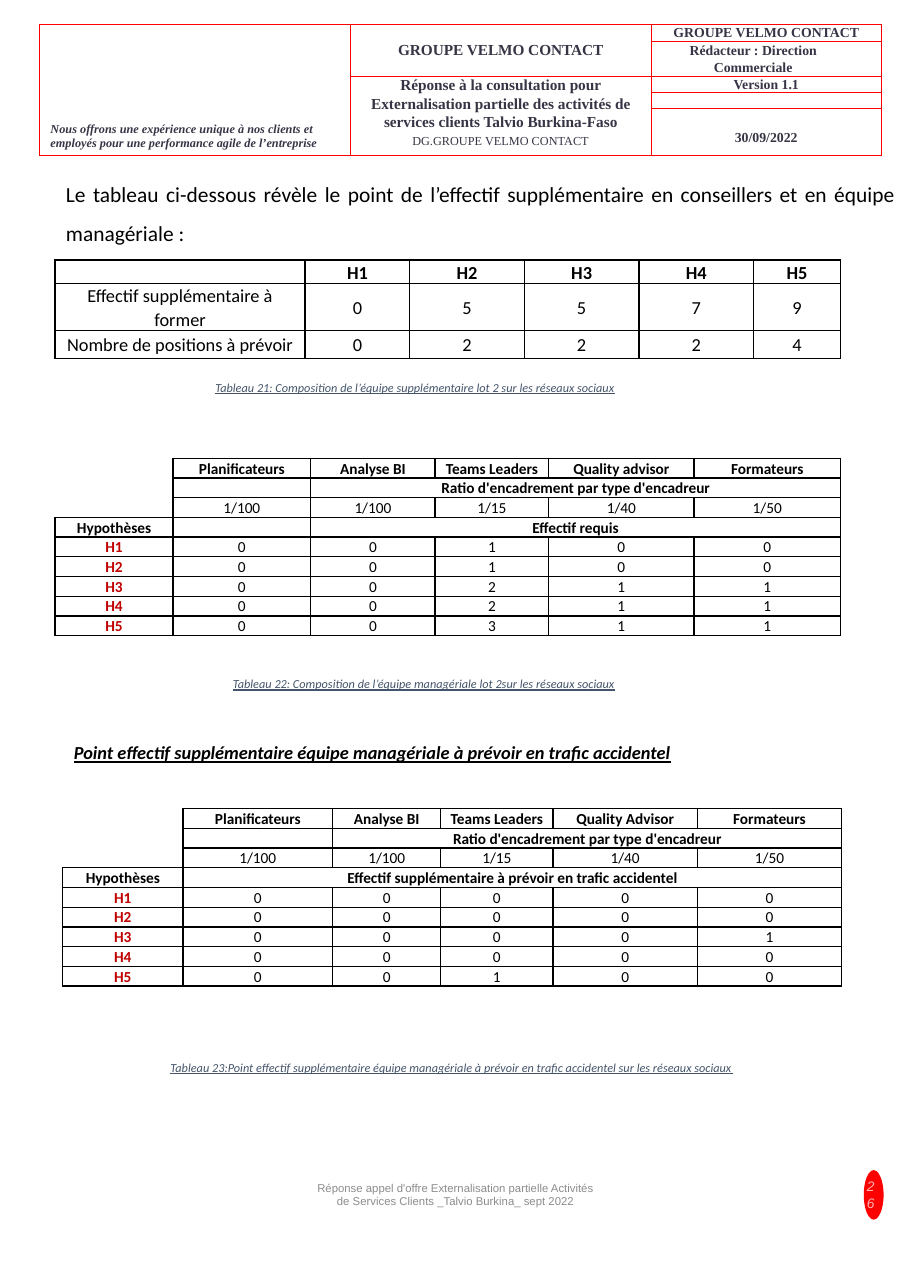
import pptx
import pptx.util
import pptx.dml.color
import pptx.enum.shapes
import pptx.enum.text
import pptx.oxml
from lxml import etree
from pptx.util import Inches, Pt

COLORS = {"text": "000000", "header": "373545", "hypothesis": "C00000", "caption": "44546A",
          "footer": "8C8C8C", "accent": "FF0000", "page_number": "FFB3B3"}
ALIGN = pptx.enum.text.PP_ALIGN
ANCHOR = pptx.enum.text.MSO_ANCHOR
DRAWING = "http://schemas.openxmlformats.org/drawingml/2006/main"
PLAIN_STYLE = "{2D5ABB26-0587-4C30-8999-92F81FD0307C}"


def format_para(para, size, font="Calibri", color="text", bold=False, italic=False,
                underline=False, align=ALIGN.CENTER, spacing=None):
    para.alignment = align
    if spacing:
        para.line_spacing = spacing
    para.font.size = Pt(size)
    para.font.name = font
    para.font.bold = bold
    para.font.italic = italic
    para.font.underline = underline
    para.font.color.rgb = pptx.dml.color.RGBColor.from_string(COLORS[color])


def add_text(page, box, text, size, wrap=True, anchor=ANCHOR.TOP, **style):
    frame = page.shapes.add_textbox(*map(Inches, box)).text_frame
    frame.word_wrap = wrap
    frame.vertical_anchor = anchor
    frame.text = text
    format_para(frame.paragraphs[0], size, **style)
    return frame.paragraphs[0]


def set_borders(cell, sides, color, width):
    props = cell._tc.get_or_add_tcPr()
    for index, side in enumerate(side for side in "LRTB" if side in sides):
        line = pptx.oxml.parse_xml(
            f'<a:ln{side} xmlns:a="{DRAWING}" w="{int(Pt(width))}"><a:solidFill>'
            f'<a:srgbClr val="{COLORS[color]}"/></a:solidFill></a:ln{side}>')
        props.insert(index, line)


def add_grid(page, left, top, columns, rows, color, width, margin, open_cells=()):
    box = map(Inches, (left, top, sum(columns), sum(rows)))
    table = page.shapes.add_table(len(rows), len(columns), *box).table
    table.first_row = table.horz_banding = False
    table._tbl.tblPr.find(f"{{{DRAWING}}}tableStyleId").text = PLAIN_STYLE
    for column, size in zip(table.columns, columns):
        column.width = Inches(size)
    for row, size in zip(table.rows, rows):
        row.height = Inches(size)
    for row in range(len(rows)):
        for column in range(len(columns)):
            cell = table.cell(row, column)
            cell.fill.background()
            cell.vertical_anchor = ANCHOR.MIDDLE
            cell.margin_left = cell.margin_right = Inches(margin)
            cell.margin_top = cell.margin_bottom = 0
            sides = "LRTB"
            if (row, column) in open_cells:
                sides = "R" if (row + 1, column) in open_cells else "RB"
            set_borders(cell, sides, color, width)
    return table


def fill_cell(cell, text, size, **style):
    if text:
        cell.text = text
        format_para(cell.text_frame.paragraphs[0], size, **style)
    else:
        para = cell.text_frame.paragraphs[0]
        etree.SubElement(para._p, f"{{{DRAWING}}}endParaRPr", sz=str(size * 100))


def add_header(page, left, top):
    table = add_grid(page, left, top, [2.82, 2.73, 2.09], [0.15, 0.32, 0.15, 0.14, 0.43],
                     "accent", 0.25, 0)
    for first, last in (((0, 0), (4, 0)), ((0, 1), (1, 1)), ((2, 1), (4, 1))):
        table.cell(*first).merge(table.cell(*last))
    style = dict(font="Times New Roman", color="header")
    entries = {
        (0, 0): ("", 6, None),
        (0, 1): ("GROUPE VELMO CONTACT", 10, None),
        (0, 2): ("GROUPE VELMO CONTACT", 9, Pt(10.7)),
        (1, 2): ("Rédacteur : Direction Commerciale", 9, Pt(11.3)),
        (2, 1): ("Réponse à la consultation pour", 10, Pt(11.9)),
        (2, 2): ("Version 1.1", 9, Pt(10.8)),
        (3, 2): ("", 6, None),
        (4, 2): ("30/09/2022", 9, None),
    }
    for place, (text, size, spacing) in entries.items():
        fill_cell(table.cell(*place), text, size, bold=True, spacing=spacing, **style)

    subject = table.cell(2, 1)
    subject.vertical_anchor = ANCHOR.TOP
    para = subject.text_frame.add_paragraph()
    para.text = "Externalisation partielle des activités de services clients Talvio Burkina-Faso"
    format_para(para, 10, bold=True, spacing=Pt(11.9), **style)
    para = subject.text_frame.add_paragraph()
    para.text = "DG.GROUPE VELMO CONTACT"
    para.space_before = Pt(2.6)
    format_para(para, 8, **style)

    author = table.cell(1, 2)
    author.margin_right = Inches(0.4)
    author_para = author.text_frame.paragraphs[0]
    author_para.alignment = ALIGN.LEFT
    props = author_para._p.get_or_add_pPr()
    props.set("marL", str(Inches(0.57)))
    props.set("indent", str(-Inches(0.22)))
    date = table.cell(4, 2)
    date.vertical_anchor = ANCHOR.TOP
    date.margin_top = Inches(0.2)

    add_text(page, (left, top + 0.83, 2.85, 0.37),
             "Nous offrons une expérience unique à nos clients et employés pour une "
             "performance agile de l’entreprise",
             8, bold=True, italic=True, align=ALIGN.LEFT, **style)


def add_staff_table(page, left, top):
    table = add_grid(page, left, top, [2.27, 0.95, 1.04, 1.04, 1.04, 0.79],
                     [0.21, 0.25, 0.25], "text", 1, 0.07)
    content = [["", "H1", "H2", "H3", "H4", "H5"],
               ["Effectif supplémentaire à former", "0", "5", "5", "7", "9"],
               ["Nombre de positions à prévoir", "0", "2", "2", "2", "4"]]
    for row, texts in enumerate(content):
        for column, text in enumerate(texts):
            fill_cell(table.cell(row, column), text, 12, bold=row == 0, spacing=1.07)


def add_management_table(page, left, top, columns, advisor, need, need_column, counts):
    table = add_grid(page, left, top, columns, [0.17] * 9, "text", 1, 0.07,
                     [(row, 0) for row in range(3)])
    need_row = ["Hypothèses"] + [""] * 5
    need_row[need_column] = need
    content = [["", "Planificateurs", "Analyse BI", "Teams Leaders", advisor, "Formateurs"],
               ["", "", "Ratio d'encadrement par type d'encadreur", "", "", ""],
               ["", "1/100", "1/100", "1/15", "1/40", "1/50"],
               need_row]
    content += [[f"H{number}", *digits] for number, digits in enumerate(counts, 1)]
    for row, texts in enumerate(content):
        for column, text in enumerate(texts):
            hypothesis = row > 3 and column == 0
            fill_cell(table.cell(row, column), text, 10, bold=row in (0, 1, 3) or hypothesis,
                      color="hypothesis" if hypothesis else "text", spacing=1.07)
    table.cell(1, 2).merge(table.cell(1, 5))
    table.cell(3, need_column).merge(table.cell(3, 5))


def add_caption(page, box, text, wrap=False):
    para = add_text(page, box, text, 8, wrap=wrap, color="caption", italic=True, underline=True)
    para.space_after = Pt(10)


def add_heading(page, box):
    title = page.shapes.title
    title.left, title.top, title.width, title.height = map(Inches, box)
    frame = title.text_frame
    frame.text = "Point effectif supplémentaire équipe managériale à prévoir en trafic accidentel"
    frame.word_wrap = True
    frame.auto_size = pptx.enum.text.MSO_AUTO_SIZE.NONE
    frame.vertical_anchor = ANCHOR.TOP
    format_para(frame.paragraphs[0], 12, bold=True, italic=True, underline=True,
                align=ALIGN.LEFT)


def add_footer(page, top):
    badge = page.shapes.add_shape(pptx.enum.shapes.MSO_SHAPE.OVAL,
                                  *map(Inches, (7.84, top + 0.09, 0.18, 0.45)))
    badge.shadow.inherit = False
    badge.fill.solid()
    badge.fill.fore_color.rgb = pptx.dml.color.RGBColor.from_string(COLORS["accent"])
    badge.line.fill.background()
    add_text(page, (2.74, top, 2.79, 0.62),
             "Réponse appel d'offre Externalisation partielle Activités de Services Clients "
             "_Talvio Burkina_ sept 2022",
             7.4, anchor=ANCHOR.MIDDLE, font="Arial", color="footer")
    add_text(page, (7.77, top, 0.24, 0.62), "26", 9, anchor=ANCHOR.MIDDLE, font="Arial",
             color="page_number", italic=True, align=ALIGN.RIGHT)


def main():
    deck = pptx.Presentation()
    deck.slide_width, deck.slide_height = Inches(8.26), Inches(11.69)
    page = deck.slides.add_slide(deck.slide_layouts[5])
    add_header(page, 0.36, 0.22)
    intro = add_text(page, (0.5, 1.48, 7.73, 0.81),
                     "Le tableau ci-dessous révèle le point de l’effectif supplémentaire en "
                     "conseillers et en équipe managériale :",
                     14, align=ALIGN.JUSTIFY, spacing=1.5)
    intro.space_after = Pt(8)
    add_staff_table(page, 0.5, 2.36)
    add_caption(page, (1.83, 3.4, 3.88, 0.24),
                "Tableau 21: Composition de l’équipe supplémentaire lot 2 sur les réseaux sociaux")
    add_management_table(page, 0.5, 4.16, [1.07, 1.25, 1.13, 1.03, 1.32, 1.33],
                         "Quality advisor", "Effectif requis", 2,
                         ["00100", "00100", "00211", "00211", "00311"])
    add_caption(page, (1.99, 6.09, 3.72, 0.24),
                "Tableau 22: Composition de l’équipe managériale lot 2sur les réseaux sociaux")
    add_heading(page, (0.57, 6.68, 7, 0.3))
    add_management_table(page, 0.57, 7.34, [1.09, 1.36, 0.98, 1.02, 1.31, 1.31],
                         "Quality Advisor",
                         "Effectif supplémentaire à prévoir en trafic accidentel", 1,
                         ["00000", "00000", "00001", "00000", "00100"])
    add_caption(page, (1.34, 9.57, 5.52, 0.24),
                "Tableau 23:Point effectif supplémentaire équipe managériale à prévoir en "
                "trafic accidentel sur les réseaux sociaux", wrap=True)
    add_footer(page, 10.53)
    deck.save("out.pptx")


if __name__ == "__main__":
    main()
